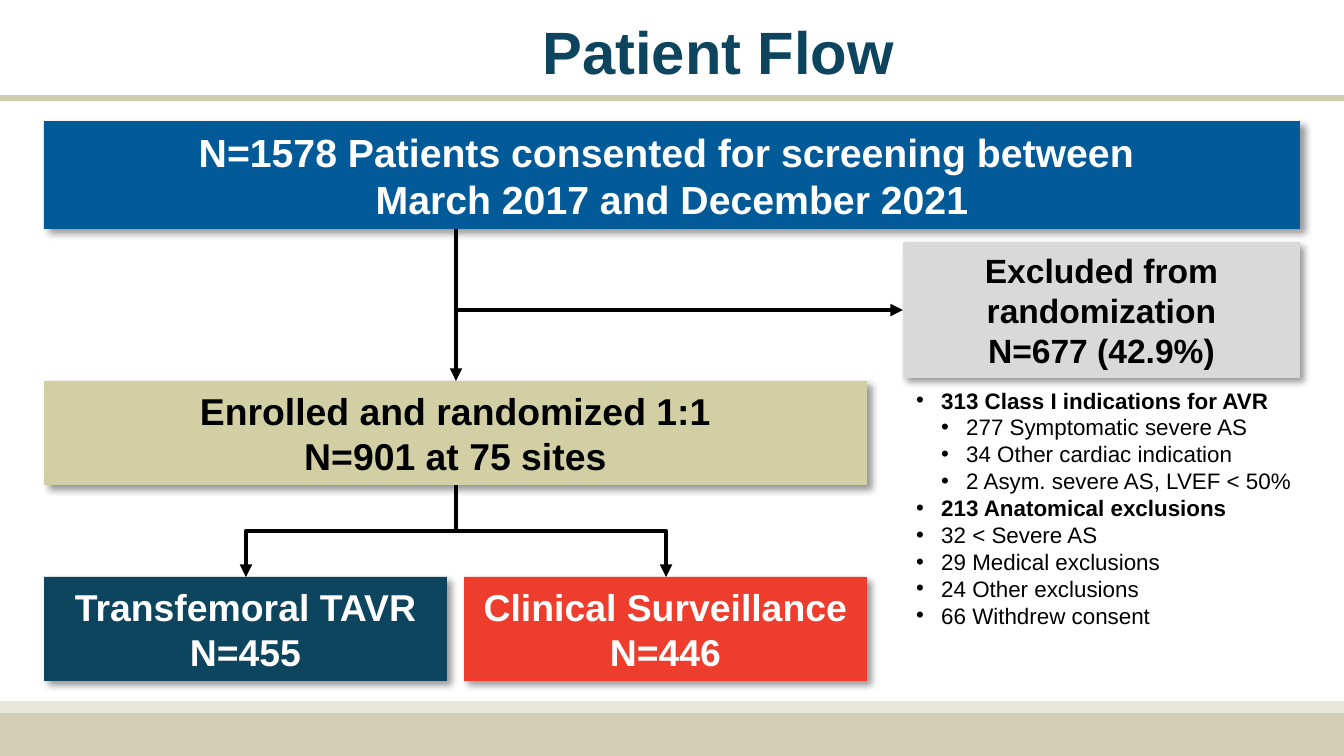
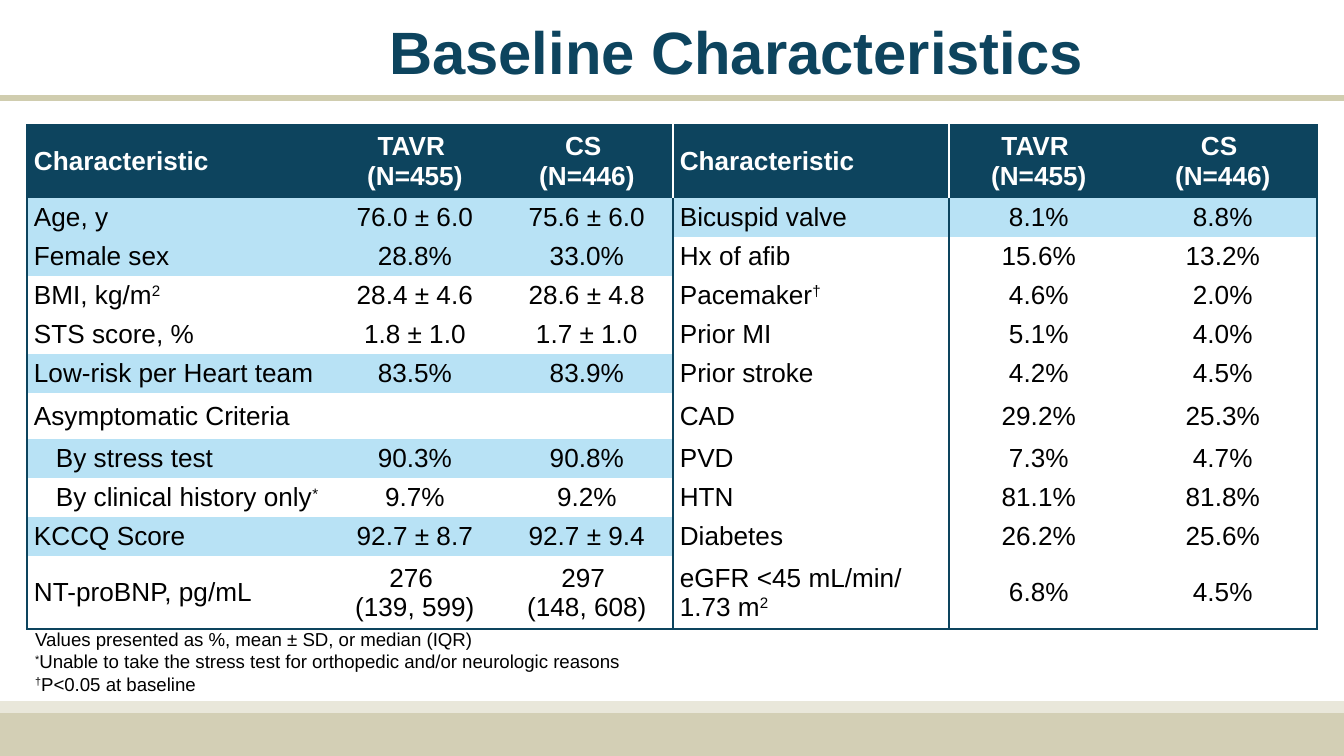
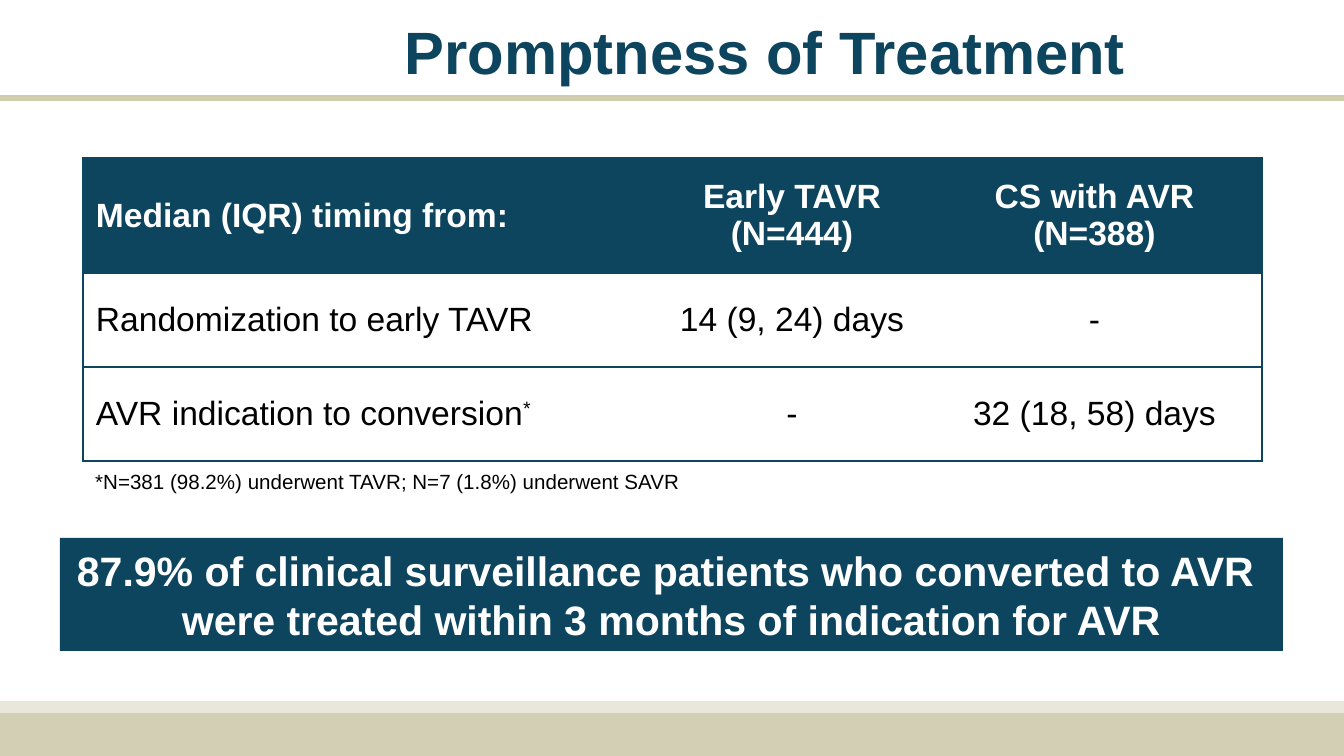
from lxml.etree import SubElement
from pptx import Presentation
from pptx.dml.color import RGBColor
from pptx.enum.shapes import MSO_CONNECTOR as LINK, MSO_SHAPE as SHAPE
from pptx.enum.text import MSO_ANCHOR as ANCHOR, PP_ALIGN as ALIGN
from pptx.oxml.ns import qn
from pptx.util import Pt

PX = 6804
NAVY, BLUE, RED, SKY = "0D445E", "025B98", "EE3D2C", "B8E2F5"
SAND, STONE, CREAM, RULE = "D3CFA5", "D3CFB5", "E9E7DA", "D0CDAF"
GREY, BLACK, WHITE = "D9D9D9", "000000", "FFFFFF"
color = RGBColor.from_string


def write(frame, text, size, ink, bold=False, align=ALIGN.LEFT):
    frame.word_wrap = True
    font_format = {"name": "Arial", "size": Pt(size), "bold": bold}
    for row, line in enumerate(text.split("\n")):
        para = frame.add_paragraph() if row else frame.paragraphs[0]
        para.alignment = align
        for part, words in enumerate(line.split("^")):
            span = para.add_run()
            span.text = words
            for name, value in font_format.items():
                setattr(span.font, name, value)
            span.font.color.rgb = color(ink)
            if part % 2:
                span.font._element.set("baseline", "30000")


def link(page, kind, ends, ink, weight, arrow=False):
    connector = page.shapes.add_connector(kind, *[value * PX for value in ends])
    connector.line.color.rgb = color(ink)
    connector.line.width = Pt(weight)
    properties = connector._element.spPr
    if arrow:
        SubElement(properties.find(qn("a:ln")), qn("a:tailEnd"), type="triangle")
    SubElement(properties, qn("a:effectLst"))
    return connector


deck = Presentation()
deck.slide_width, deck.slide_height = 1344 * PX, 756 * PX

titles = [
    ("Patient Flow", 306, 825, ALIGN.CENTER),
    ("Baseline Characteristics", 376, 923, ALIGN.LEFT),
    ("Promptness of Treatment", 306, 919, ALIGN.CENTER),
]
pages = []
for title, left, width, align in titles:
    page = deck.slides.add_slide(deck.slide_layouts[6])
    band = page.shapes.add_shape(SHAPE.RECTANGLE, 0, 703 * PX, 1344 * PX, 53 * PX)
    band.shadow.inherit = False
    band.fill.solid()
    band.fill.fore_color.rgb = color(STONE)
    band.line.fill.background()
    link(page, LINK.STRAIGHT, (0, 707, 1344, 707), CREAM, 6)
    link(page, LINK.STRAIGHT, (0, 98, 1344, 98), RULE, 3)
    heading = page.shapes.add_textbox(left * PX, 0, width * PX, 101 * PX)
    heading.text_frame.vertical_anchor = ANCHOR.MIDDLE
    write(heading.text_frame, title, 32, NAVY, True, align)
    pages.append(page)
flow, baseline, timing = pages

link(flow, LINK.STRAIGHT, (456, 218, 456, 381), BLACK, 2.25, True)
link(flow, LINK.STRAIGHT, (456, 310, 903, 310), BLACK, 2.25, True)
for ends, turn in [((305, 426, 397, 636), 90), ((607, 426, 515, 636), 270)]:
    branch = link(flow, LINK.ELBOW, ends, BLACK, 2.25, True)
    branch._element.spPr.find(qn("a:xfrm")).set("rot", str(turn * 60000))

boxes = [
    (flow, (44, 381, 823, 104), SAND, BLACK, 20, "Enrolled and randomized 1:1\nN=901 at 75 sites"),
    (flow, (903, 242, 397, 136), GREY, BLACK, 18, "Excluded from randomization\nN=677 (42.9%)"),
    (flow, (44, 577, 403, 104), NAVY, WHITE, 20, "Transfemoral TAVR\nN=455"),
    (flow, (464, 577, 403, 104), RED, WHITE, 20, "Clinical Surveillance\nN=446"),
    (flow, (44, 121, 1256, 108), BLUE, WHITE, 21,
     "N=1578 Patients consented for screening between \nMarch 2017 and December 2021"),
    (timing, (60, 538, 1223, 113), NAVY, WHITE, 22,
     "87.9% of clinical surveillance patients who converted to AVR \n"
     "were treated within 3 months of indication for AVR"),
]
for page, place, fill, ink, size, text in boxes:
    box = page.shapes.add_shape(SHAPE.RECTANGLE, *[value * PX for value in place])
    box.shadow.inherit = False
    box.fill.solid()
    box.fill.fore_color.rgb = color(fill)
    box.line.fill.background()
    box.text_frame.vertical_anchor = ANCHOR.MIDDLE
    write(box.text_frame, text, size, ink, True, ALIGN.CENTER)
    if page is flow:
        effects = box._element.spPr.find(qn("a:effectLst"))
        shadow = SubElement(effects, qn("a:outerShdw"), blurRad=str(Pt(4)), dist=str(Pt(3)),
                            dir="2700000", algn="tl", rotWithShape="0")
        tint = SubElement(shadow, qn("a:srgbClr"), val=BLACK)
        SubElement(tint, qn("a:alpha"), val="40000")

reasons = [
    (1, True, "313 Class I indications for AVR"),
    (2, False, "277 Symptomatic severe AS"),
    (2, False, "34 Other cardiac indication"),
    (2, False, "2 Asym. severe AS, LVEF < 50%"),
    (1, True, "213 Anatomical exclusions"),
    (1, False, "32 < Severe AS"),
    (1, False, "29 Medical exclusions"),
    (1, False, "24 Other exclusions"),
    (1, False, "66 Withdrew consent"),
]
exclusions = flow.shapes.add_textbox(903 * PX, 380 * PX, 440 * PX, 312 * PX)
write(exclusions.text_frame, "\n".join(text for _, _, text in reasons), 12, BLACK)
for para, (depth, bold, _) in zip(exclusions.text_frame.paragraphs, reasons):
    para.level = depth - 1
    para.runs[0].font.bold = bold
    properties = para._p.get_or_add_pPr()
    properties.set("marL", str(25 * depth * PX))
    properties.set("indent", str(-25 * PX))
    SubElement(properties, qn("a:buFont"), typeface="Arial")
    SubElement(properties, qn("a:buChar"), char="•")

characteristics = [
    ("Characteristic", "TAVR \n(N=455)", "CS \n(N=446)") * 2,
    ("Age, y", "76.0 ± 6.0", "75.6 ± 6.0", "Bicuspid valve", "8.1%", "8.8%"),
    ("Female sex", "28.8%", "33.0%", "Hx of afib", "15.6%", "13.2%"),
    ("BMI, kg/m^2", "28.4 ± 4.6", "28.6 ± 4.8", "Pacemaker^†", "4.6%", "2.0%"),
    ("STS score, %", "1.8 ± 1.0", "1.7 ± 1.0", "Prior MI", "5.1%", "4.0%"),
    ("Low-risk per Heart team", "83.5%", "83.9%", "Prior stroke", "4.2%", "4.5%"),
    ("Asymptomatic Criteria", "", "", "CAD", "29.2%", "25.3%"),
    ("By stress test", "90.3%", "90.8%", "PVD", "7.3%", "4.7%"),
    ("By clinical history only^*", "9.7%", "9.2%", "HTN", "81.1%", "81.8%"),
    ("KCCQ Score", "92.7 ± 8.7", "92.7 ± 9.4", "Diabetes", "26.2%", "25.6%"),
    ("NT-proBNP, pg/mL", "276 \n(139, 599)", "297 \n(148, 608)",
     "eGFR <45 mL/min/ 1.73 m^2", "6.8%", "4.5%"),
]
timings = [
    ("Median (IQR) timing from:", "Early TAVR\n(N=444)", "CS with AVR (N=388)"),
    ("Randomization to early TAVR", "14 (9, 24) days", "-"),
    ("AVR indication to conversion^*", "-", "32 (18, 58) days"),
]
tables = [
    {"page": baseline, "rows": characteristics, "left": 27, "top": 125, "size": 14,
     "widths": [302, 172, 172, 276, 180, 188], "heights": [73] + [39] * 9 + [73],
     "margins": (7, 3), "ruled": [0], "shaded": {0: [1, 2, 5, 7, 9], 1: [1]}},
    {"page": timing, "rows": timings, "left": 83, "top": 158, "size": 18,
     "widths": [574, 270, 335], "heights": [115, 94, 94],
     "margins": (13, 7), "ruled": [0, 1, 2], "shaded": {}},
]
for plan in tables:
    rows, widths, heights = plan["rows"], plan["widths"], plan["heights"]
    side, end = plan["margins"]
    frame = plan["page"].shapes.add_table(
        len(rows), len(widths), plan["left"] * PX, plan["top"] * PX,
        sum(widths) * PX, sum(heights) * PX)
    table = frame.table
    table.first_row = table.horz_banding = False
    style = table._tbl.tblPr.find(qn("a:tableStyleId"))
    style.text = "{2D5ABB26-0587-4C30-8999-92F81FD0307C}"
    for column, width in zip(table.columns, widths):
        column.width = width * PX
    for r, (row, height) in enumerate(zip(rows, heights)):
        table.rows[r].height = height * PX
        for c, text in enumerate(row):
            cell = table.cell(r, c)
            group, place = divmod(c, 3)
            cell_format = {
                "margin_left": side * PX, "margin_right": side * PX,
                "margin_top": end * PX, "margin_bottom": end * PX,
                "vertical_anchor": ANCHOR.MIDDLE,
            }
            for name, value in cell_format.items():
                setattr(cell, name, value)
            write(cell.text_frame, text, plan["size"], BLACK if r else WHITE, r == 0,
                  ALIGN.CENTER if place else ALIGN.LEFT)
            if text.startswith("By "):
                cell.text_frame.paragraphs[0]._p.get_or_add_pPr().set("marL", str(22 * PX))
            last = r == len(rows) - 1
            borders = {
                "a:lnL": place == 0,
                "a:lnR": place == 2,
                "a:lnT": r in plan["ruled"],
                "a:lnB": last or r + 1 in plan["ruled"],
            }
            for tag, drawn in borders.items():
                if drawn:
                    inner = r == 0 and (tag, c) in [("a:lnR", 2), ("a:lnL", 3)] and len(row) > 3
                    border = SubElement(cell._tc.get_or_add_tcPr(), qn(tag), w=str(Pt(1)))
                    paint = SubElement(border, qn("a:solidFill"))
                    SubElement(paint, qn("a:srgbClr"), val=WHITE if inner else NAVY)
            shaded = r in plan["shaded"].get(group, [])
            cell.fill.solid()
            cell.fill.fore_color.rgb = color(NAVY if r == 0 else SKY if shaded else WHITE)

notes = [
    (baseline, (22, 621, 1124, 82), 10,
     "Values presented as %, mean ± SD, or median (IQR)\n"
     "^*^Unable to take the stress test for orthopedic and/or neurologic reasons\n"
     "^†^P<0.05 at baseline"),
    (timing, (82, 462, 695, 39), 11, "*N=381 (98.2%) underwent TAVR; N=7 (1.8%) underwent SAVR"),
]
for page, place, size, text in notes:
    note = page.shapes.add_textbox(*[value * PX for value in place])
    write(note.text_frame, text, size, BLACK)

deck.save("out.pptx")
